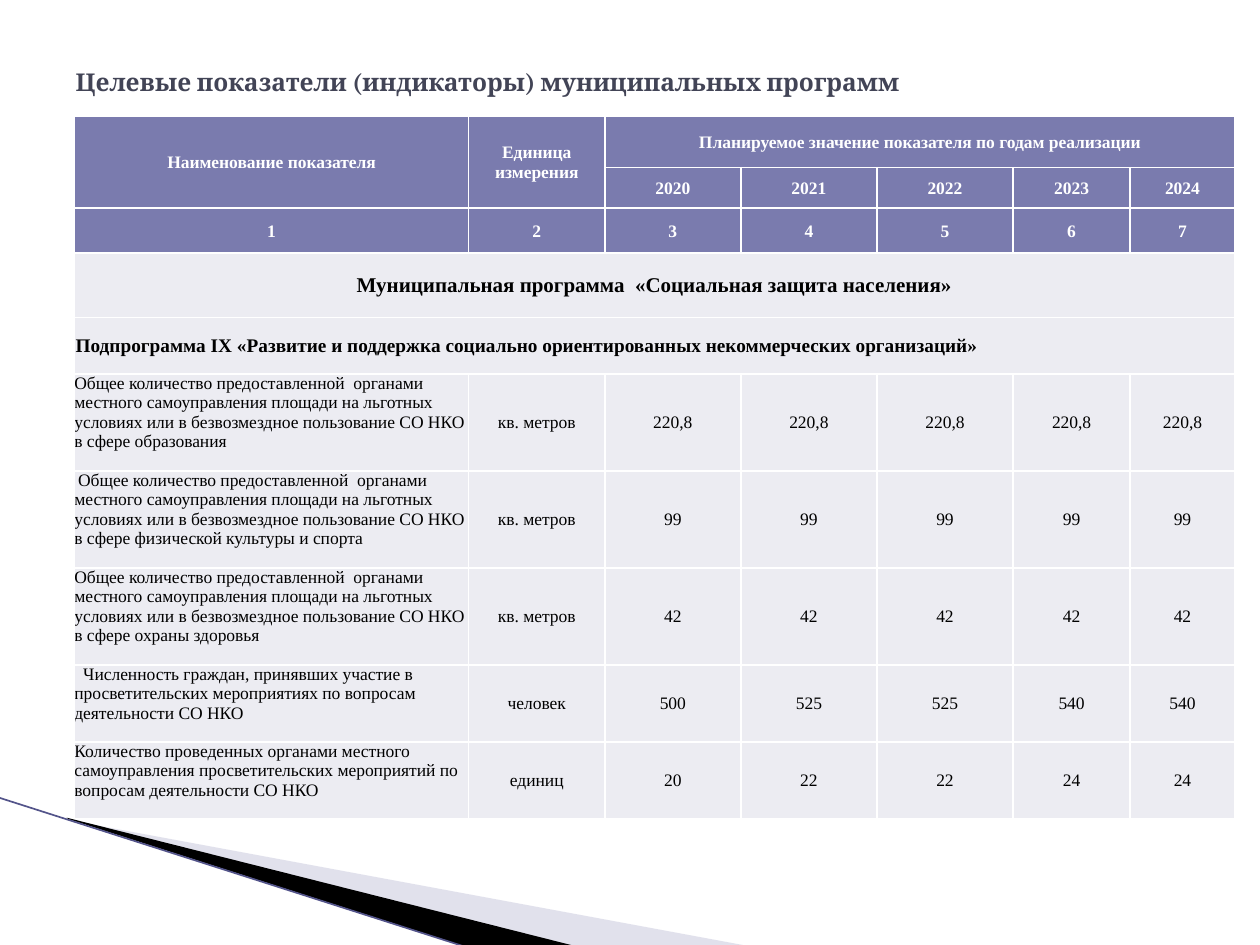
from lxml.etree import SubElement
from pptx import Presentation
from pptx.dml.color import RGBColor
from pptx.enum.shapes import MSO_CONNECTOR
from pptx.enum.text import MSO_ANCHOR, PP_ALIGN
from pptx.oxml.ns import qn
from pptx.util import Inches, Pt

WHITE = RGBColor(0xFF, 0xFF, 0xFF)
BLACK = RGBColor(0, 0, 0)
SLATE = RGBColor(0x42, 0x44, 0x56)
HEADER = RGBColor(0x7A, 0x7B, 0xAE)
BODY = RGBColor(0xEC, 0xEC, 0xF2)
LILAC = RGBColor(0xB6, 0xB6, 0xD1)
EDGE = RGBColor(0x53, 0x54, 0x8A)

TITLE = "Целевые показатели (индикаторы) муниципальных программ"
AREA = ("Общее количество предоставленной  органами местного самоуправления площади "
        "на льготных условиях или в безвозмездное пользование СО НКО в сфере ")
HEAD_ROWS = [
    ["Наименование показателя", "Единица измерения",
     "Планируемое значение показателя по годам реализации", "", "", "", ""],
    ["", "", "2020", "2021", "2022", "2023", "2024"],
    ["1", "2", "3", "4", "5", "6", "7"],
]
PROGRAM = "Муниципальная программа  «Социальная защита населения»"
SUBPROGRAM = ("Подпрограмма IX «Развитие и поддержка социально ориентированных "
              "некоммерческих организаций»")
INDICATORS = [
    (AREA + "образования", 0, "кв. метров", ["220,8"] * 5),
    (AREA + "физической культуры и спорта", 0.03, "кв. метров", ["99"] * 5),
    (AREA + "охраны здоровья", 0, "кв. метров", ["42"] * 5),
    ("Численность граждан, принявших участие в просветительских мероприятиях "
     "по вопросам деятельности СО НКО", 0.07, "человек", ["500", "525", "525", "540", "540"]),
    ("Количество проведенных органами местного самоуправления просветительских "
     "мероприятий по вопросам деятельности СО НКО", 0, "единиц", ["20", "22", "22", "24", "24"]),
]
COLS = [3.13, 1.08, 1.08, 1.08, 1.08, 0.93, 0.83]
ROWS = [0.41, 0.32, 0.36, 0.51, 0.45, 0.77, 0.77, 0.77, 0.61, 0.61]
MERGES = [((0, 0), (1, 0)), ((0, 1), (1, 1)), ((0, 2), (0, 6)),
          ((3, 0), (3, 6)), ((4, 0), (4, 6))]
WEDGES = [
    ([(0.55, 6.5), (0.55, 6.51), (5.95, 7.51), (4.56, 7.51)], LILAC, 40),
    ([(0.53, 6.49), (4.57, 7.51), (3.72, 7.52), (0.54, 6.5)], BLACK, 100),
]


def set_font(font, **values):
    color = values.pop("color")
    for name, value in values.items():
        setattr(font, name, value)
    font.color.rgb = color


def add_wedge(s, points, color, opacity):
    points = [(Inches(x), Inches(y)) for x, y in points]
    builder = s.shapes.build_freeform(*points[0])
    builder.add_line_segments(points[1:])
    sp = builder.convert_to_shape()
    sp.shadow.inherit = False
    sp.line.fill.background()
    sp.fill.solid()
    sp.fill.fore_color.rgb = color
    if opacity < 100:
        clr = sp.fill._xPr.find(qn("a:solidFill"))[0]
        SubElement(clr, qn("a:alpha")).set("val", str(opacity * 1000))


def add_edge(s):
    line = s.shapes.add_connector(MSO_CONNECTOR.STRAIGHT, Inches(-0.01), Inches(6.33),
                                  Inches(3.71), Inches(7.52))
    line.line.color.rgb = EDGE
    line.line.width = Pt(0.95)
    SubElement(line._element.spPr, qn("a:effectLst"))


def style_cell(cell, fill, inset):
    tcPr = cell._tc.get_or_add_tcPr()
    for side in ("a:lnL", "a:lnR", "a:lnT", "a:lnB"):
        ln = SubElement(tcPr, qn(side), w=str(Pt(1)))
        SubElement(SubElement(ln, qn("a:solidFill")), qn("a:srgbClr"), val=str(WHITE))
    cell.fill.solid()
    cell.fill.fore_color.rgb = fill
    cell.vertical_anchor = MSO_ANCHOR.MIDDLE
    for side in ("left", "right", "top"):
        setattr(cell, f"margin_{side}", Inches(inset))
    cell.margin_bottom = 0


def add_table(s):
    grid = HEAD_ROWS + [[PROGRAM] + [""] * 6, [SUBPROGRAM] + [""] * 6]
    first_body = len(grid)
    grid = grid + [[name, unit, *values] for name, _, unit, values in INDICATORS]
    table = s.shapes.add_table(len(ROWS), len(COLS), Inches(0.59), Inches(0.92),
                               Inches(sum(COLS)), Inches(sum(ROWS))).table
    for col, width in zip(table.columns, COLS):
        col.width = Inches(width)
    for row, height in zip(table.rows, ROWS):
        row.height = Inches(height)
    sizes = {3: 12, 4: 11}
    for i, texts in enumerate(grid):
        is_head, is_body = i < len(HEAD_ROWS), i >= first_body
        for j, text in enumerate(texts):
            cell = table.cell(i, j)
            style_cell(cell, HEADER if is_head else BODY, 0 if is_body else 0.01)
            p = cell.text_frame.paragraphs[0]
            p.alignment = PP_ALIGN.LEFT if j == 0 and i >= 4 else PP_ALIGN.CENTER
            if is_body and j == 0:
                cell.vertical_anchor = MSO_ANCHOR.TOP
                indent = INDICATORS[i - first_body][1]
                p._p.get_or_add_pPr().set("indent", str(Inches(indent)))
            if text:
                r = p.add_run()
                r.text = text
                set_font(r.font, name="Times New Roman", size=Pt(sizes.get(i, 10)),
                         bold=not is_body, color=WHITE if is_head else BLACK)
    for start, end in MERGES:
        table.cell(*start).merge(table.cell(*end))


def add_title(s):
    sp = s.shapes.title
    sp.left, sp.top, sp.width, sp.height = map(Inches, (0.5, 0.3, 9, 0.69))
    tf = sp.text_frame
    tf.word_wrap = True
    tf.vertical_anchor = MSO_ANCHOR.MIDDLE
    p = tf.paragraphs[0]
    p.alignment = PP_ALIGN.LEFT
    r = p.add_run()
    r.text = TITLE
    set_font(r.font, name="Cambria", size=Pt(14), bold=True, color=SLATE)


def main():
    prs = Presentation()
    prs.slide_width, prs.slide_height = Inches(10), Inches(7.5)
    s = prs.slides.add_slide(prs.slide_layouts[5])
    for wedge in WEDGES:
        add_wedge(s, *wedge)
    add_edge(s)
    add_title(s)
    add_table(s)
    prs.save("out.pptx")


if __name__ == "__main__":
    main()
